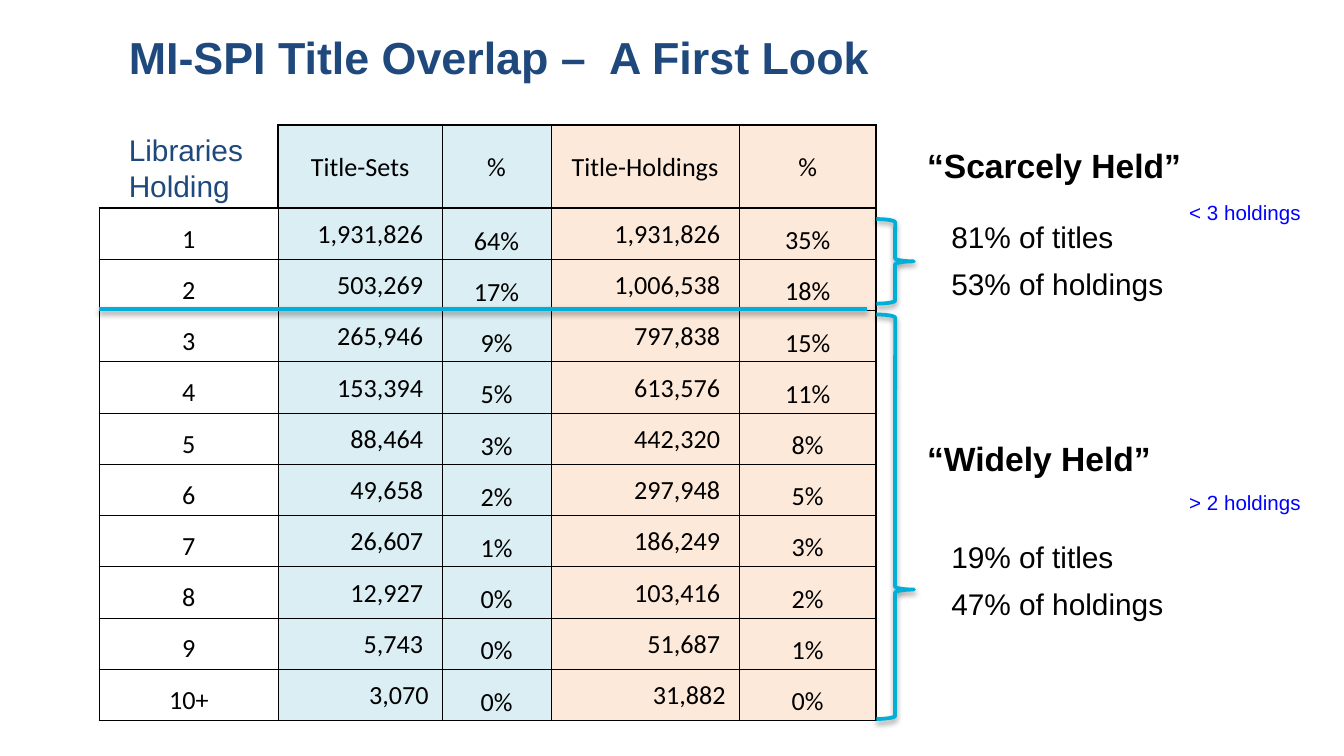
from dataclasses import dataclass
from typing import NamedTuple
from lxml.etree import SubElement as Sub
from pptx import Presentation
from pptx.dml.color import RGBColor as Rgb
from pptx.enum.shapes import MSO_CONNECTOR as Link, MSO_SHAPE as Shape
from pptx.enum.text import MSO_ANCHOR as Anchor, PP_ALIGN as Align
from pptx.oxml.ns import qn
from pptx.util import Inches, Pt


@dataclass(frozen=True)
class Theme:
    ink: str = "000000"
    navy: str = "1F497D"
    blue: str = "0000FF"
    cyan: str = "00AFD7"
    ice: str = "DAEEF3"
    peach: str = "FDE9D9"
    font: str = "Arial"
    grid: str = "Calibri"
    title: int = 24
    head: int = 18
    body: int = 16
    cell: int = 14
    note: int = 11
    thin: float = 0.5
    edge: float = 1
    mark: float = 2


class Box(NamedTuple):
    left: float
    top: float
    wide: float
    high: float


class Note(NamedTuple):
    box: Box
    lines: tuple[str, ...]
    size: int
    color: str
    bold: bool = False


class Column(NamedTuple):
    wide: float
    head: str
    fill: str | None
    align: Align
    drop: float
    right: float
    cells: tuple[str, ...]


class Group(NamedTuple):
    name: str
    top: float
    rule: str
    hint: float
    stats: tuple[str, str]
    base: float
    brace: Box
    bend: float


T = Theme()
WIDE, HIGH = Inches(10), Inches(5.625)
LEFT, TOP, HEAD, ROW = 7.4, 16.53, 11.02, 6.78
COLS = (
    Column(13.3, "", None, Align.CENTER, 0.08, 0.01,
           ("1", "2", "3", "4", "5", "6", "7", "8", "9", "10+")),
    Column(12.2, "Title-Sets", T.ice, Align.RIGHT, 0.01, 0.1,
           ("1,931,826", "503,269", "265,946", "153,394", "88,464",
            "49,658", "26,607", "12,927", "5,743", "3,070")),
    Column(8.1, "%", T.ice, Align.CENTER, 0.11, 0.01,
           ("64%", "17%", "9%", "5%", "3%", "2%", "1%", "0%", "0%", "0%")),
    Column(14, "Title-Holdings", T.peach, Align.RIGHT, 0.01, 0.1,
           ("1,931,826", "1,006,538", "797,838", "613,576", "442,320",
            "297,948", "186,249", "103,416", "51,687", "31,882")),
    Column(10.2, "%", T.peach, Align.CENTER, 0.1, 0.01,
           ("35%", "18%", "15%", "11%", "8%", "5%", "3%", "2%", "1%", "0%")),
)
SPACE = 0.04
GROUPS = (
    Group("“Scarcely Held”", 18.31, "< 3 holdings", 25.6,
          ("81% of titles", "53% of holdings"), 28.09,
          Box(65.2, 28.98, 2.8, 11.2), 0.5),
    Group("“Widely Held”", 57.07, "> 2 holdings", 64,
          ("19% of titles", "47% of holdings"), 70.4,
          Box(65.2, 41.6, 2.8, 53.51), 0.68),
)


def across(share: float) -> int:
    return round(WIDE * share / 100)


def down(share: float) -> int:
    return round(HIGH * share / 100)


def place(box: Box) -> tuple[int, int, int, int]:
    return across(box.left), down(box.top), across(box.wide), down(box.high)


def write(para, text: str, size: int, color: str, font: str, bold: bool = False) -> None:
    run = para.add_run()
    run.text = text
    run.font.size, run.font.name, run.font.bold = Pt(size), font, bold
    run.font.color.rgb = Rgb.from_string(color)


def add_note(slide, note: Note) -> None:
    frame = slide.shapes.add_textbox(*place(note.box)).text_frame
    frame.word_wrap = True
    for i, line in enumerate(note.lines):
        para = frame.add_paragraph() if i else frame.paragraphs[0]
        if i:
            para.space_before = Pt(6)
        write(para, line, note.size, note.color, T.font, note.bold)


def border(cell, sides: dict[str, float]) -> None:
    props = cell._tc.get_or_add_tcPr()
    for side, width in sides.items():
        line = Sub(props, qn(f"a:ln{side}"), w=str(Pt(width)))
        if width:
            fill = Sub(line, qn("a:solidFill"))
            Sub(fill, qn("a:srgbClr"), val=T.ink)
        else:
            Sub(line, qn("a:noFill"))


def edges(row: int, col: int) -> dict[str, float]:
    corner = row == col == 0
    return {
        "L": 0 if corner else T.edge if col == 0 or (row, col) == (0, 1) else T.thin,
        "R": T.edge if corner or col == len(COLS) - 1 else T.thin,
        "T": 0 if corner else T.edge if row < 2 else T.thin,
        "B": T.edge if row == 0 else T.thin,
    }


def fill_cell(cell, row: int, col: int) -> None:
    spec = COLS[col]
    last = row == len(spec.cells)
    body = row > 0
    numeric = body and spec.align == Align.RIGHT
    pad = SPACE if numeric and not last else 0
    border(cell, edges(row, col))
    if spec.fill:
        cell.fill.solid()
        cell.fill.fore_color.rgb = Rgb.from_string(spec.fill)
    else:
        cell.fill.background()
    cell.vertical_anchor = Anchor.MIDDLE
    cell.margin_left, cell.margin_bottom = Inches(0.01), 0
    cell.margin_top = Inches(spec.drop if body else 0.01)
    cell.margin_right = Inches(spec.right + pad if body else 0.01)
    para = cell.text_frame.paragraphs[0]
    para.alignment = spec.align if body else Align.CENTER
    text = spec.cells[row - 1] if body else spec.head
    if text:
        write(para, text, T.cell, T.ink, T.grid)


def add_grid(slide) -> None:
    count = len(COLS[0].cells)
    box = Box(LEFT, TOP, sum(c.wide for c in COLS), HEAD + count * ROW)
    table = slide.shapes.add_table(count + 1, len(COLS), *place(box)).table
    table.first_row = table.horz_banding = False
    for col, spec in enumerate(COLS):
        table.columns[col].width = across(spec.wide)
    for row in range(count + 1):
        table.rows[row].height = down(ROW if row else HEAD)
        for col in range(len(COLS)):
            fill_cell(table.cell(row, col), row, col)


def accent(shape) -> None:
    shape.line.color.rgb = Rgb.from_string(T.cyan)
    shape.line.width = Pt(T.mark)
    effects = Sub(shape._element.spPr, qn("a:effectLst"))
    shade = Sub(effects, qn("a:outerShdw"), blurRad=str(Pt(3.1)),
                dist=str(Pt(1.6)), dir="5400000", rotWithShape="0")
    color = Sub(shade, qn("a:srgbClr"), val=T.ink)
    Sub(color, qn("a:alpha"), val="38000")


def add_group(slide, group: Group) -> None:
    add_note(slide, Note(Box(68, group.top, 30.3, 7.11), (group.name,), T.head, T.ink, True))
    add_note(slide, Note(Box(69.8, group.base, 26.2, 12.8), group.stats, T.body, T.ink))
    add_note(slide, Note(Box(87.5, group.hint, 10.8, 5.16), (group.rule,), T.note, T.blue))
    brace = slide.shapes.add_shape(Shape.RIGHT_BRACE, *place(group.brace))
    brace.adjustments[1] = group.bend
    brace.fill.background()
    accent(brace)


def main() -> None:
    deck = Presentation()
    deck.slide_width, deck.slide_height = WIDE, HIGH
    slide = deck.slides.add_slide(deck.slide_layouts[6])
    add_grid(slide)
    add_note(slide, Note(Box(8.6, TOP, 11.2, 11.38), ("Libraries Holding",), T.body, T.navy))
    split = down(40.89)
    accent(slide.shapes.add_connector(Link.STRAIGHT, across(LEFT), split, across(64.5), split))
    for group in GROUPS:
        add_group(slide, group)
    add_note(slide, Note(Box(8.6, 3.02, 79.1, 8.89),
                         ("MI-SPI Title Overlap –  A First Look",), T.title, T.navy, True))
    deck.save("out.pptx")


if __name__ == "__main__":
    main()
